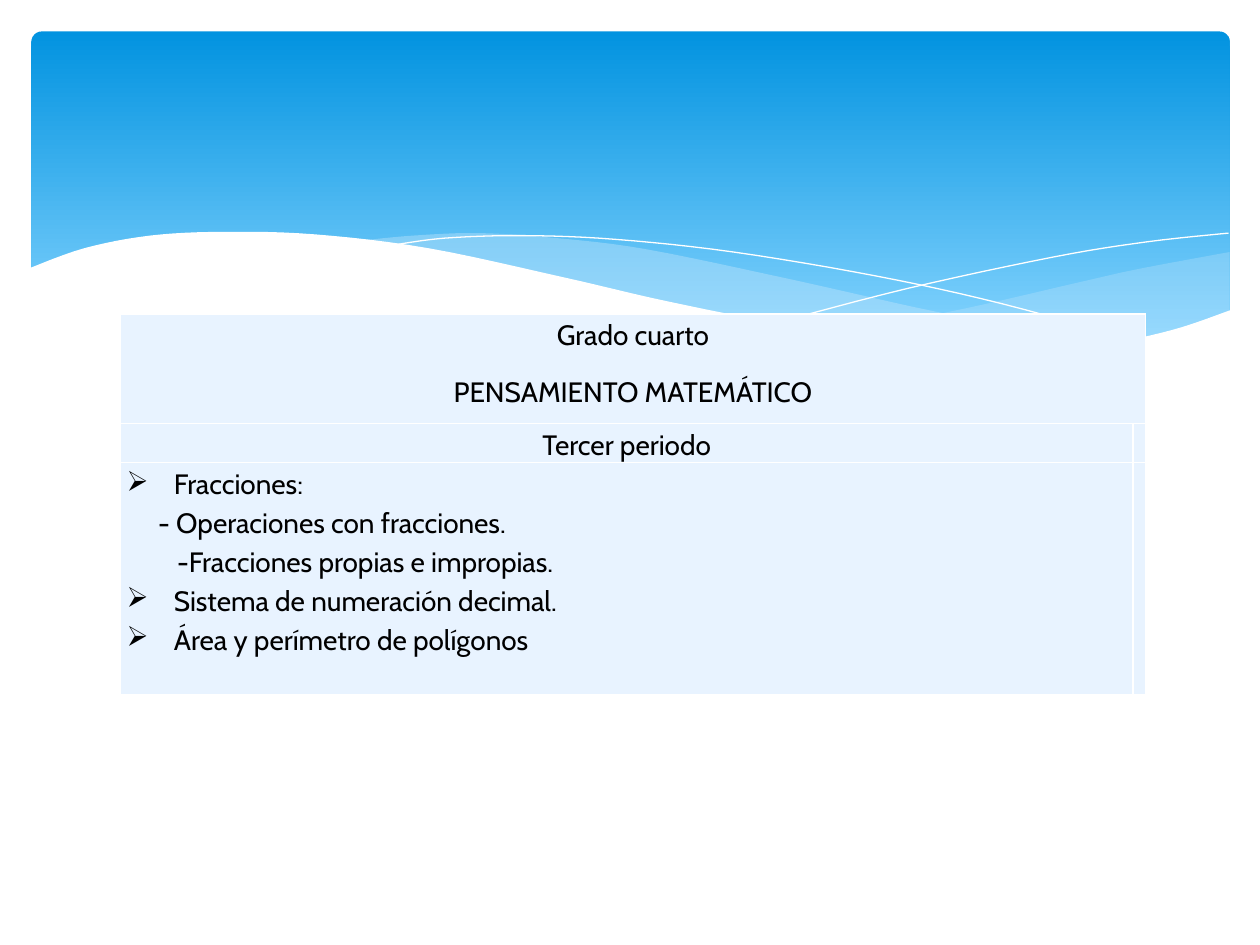
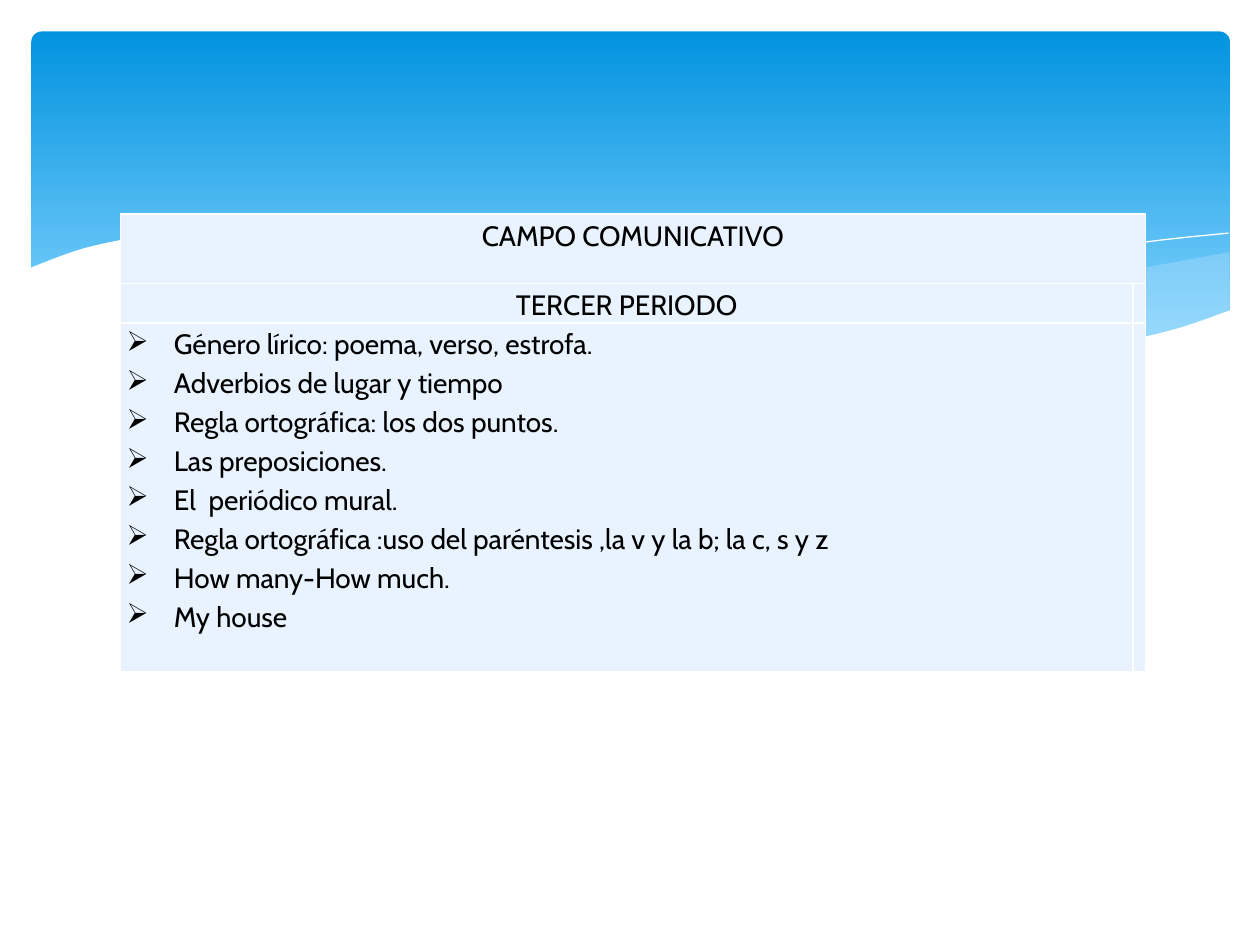
from dataclasses import dataclass
from lxml.etree import SubElement
from pptx import Presentation
from pptx.dml.color import RGBColor as Rgb
from pptx.enum.shapes import MSO_SHAPE as Preset
from pptx.enum.text import MSO_ANCHOR as Anchor, PP_ALIGN as Align
from pptx.oxml.ns import qn
from pptx.util import Inches, Pt


@dataclass(frozen=True)
class Theme:
    sky_top: str = "0293E0"
    sky_bottom: str = "83D3FE"
    veil: str = "C6E7FC"
    white: str = "FFFFFF"
    cell: str = "E8F3FF"
    ink: str = "000000"
    font: str = "Cabin"
    size: int = 16
    leading: float = 1.15
    heading_gap: int = 10
    border: int = 1


theme = Theme()

deck = Presentation()
deck.slide_width, deck.slide_height = Inches(10), Inches(7.5)
COLUMN, ROW = deck.slide_width // 40, deck.slide_height // 30


def smooth(knots, steps=6):
    padded = [knots[0], *knots, knots[-1]]
    curve = [knots[0]]
    for a, b, c, d in zip(padded, padded[1:], padded[2:], padded[3:]):
        for step in range(1, steps + 1):
            t = step / steps
            curve.append(tuple(
                (2 * q + (r - p) * t + (2 * p - 5 * q + 4 * r - s) * t ** 2
                 + (3 * q - p - 3 * r + s) * t ** 3) / 2
                for p, q, r, s in zip(a, b, c, d)))
    return curve


def write(paragraph, text, **layout):
    run = paragraph.add_run()
    run.text = text
    run.font.color.rgb = Rgb.from_string(theme.ink)
    for name, value in {"name": theme.font, "size": Pt(theme.size)}.items():
        setattr(run.font, name, value)
    for name, value in {"line_spacing": theme.leading, **layout}.items():
        setattr(paragraph, name, value)


right_veil = smooth([
    (39.04, 8), (36.24, 8.52), (34.44, 8.92), (31.16, 9.68), (28.24, 10.28), (26.44, 10.6),
]) + smooth([
    (26.44, 10.6), (28.76, 10.84), (31.24, 11.08), (33.4, 11.08), (35.56, 10.88),
    (37.4, 10.48), (39.04, 9.88),
])
middle_veil = smooth([
    (11.44, 7.64), (13.12, 7.48), (15.2, 7.4), (17.68, 7.56), (20.56, 7.92),
    (25.16, 8.88), (29.64, 9.88), (33.48, 10.6), (35.72, 10.92),
]) + smooth([
    (35.72, 10.92), (33.92, 11.08), (31.4, 11.1), (28.36, 10.88), (24.72, 10.32),
    (21.2, 9.6), (17.96, 8.88), (15.32, 8.28), (12.92, 7.84), (11.44, 7.64),
])
falling_thread = smooth([
    (12.36, 7.8), (14.12, 7.56), (16.64, 7.48), (19.56, 7.6), (23.28, 8),
    (27.8, 8.76), (31.8, 9.64), (36.28, 10.88),
])
rising_thread = smooth([
    (24.52, 10.28), (28.8, 9.16), (33.44, 8.16), (36.4, 7.68), (39, 7.4),
])
white_wave = smooth([
    (39.08, 9.84), (37.2, 10.48), (35, 10.92), (32.36, 11.08), (29.04, 10.88),
    (25.04, 10.32), (21.16, 9.56), (17.88, 8.8), (13.6, 7.88), (10, 7.44),
    (7.08, 7.36), (4.76, 7.48), (2.68, 7.88), (0.92, 8.52),
]) + [(0.92, 13.16), (39.08, 13.16)]

waves = [
    (right_veil, theme.veil, 29),
    (middle_veil, theme.veil, 40),
    (falling_thread, None, 100),
    (rising_thread, None, 100),
    (white_wave, theme.white, 100),
]

BULLET, DASH, INNER_DASH = 1.5, 1, 1.6
programmes = [
    {
        "top": 9.96,
        "heights": (3.48, 1.25, 7.36),
        "headings": ["Grado cuarto", "PENSAMIENTO MATEMÁTICO"],
        "period": "Tercer periodo",
        "topics": [
            (BULLET, "Fracciones:"),
            (DASH, "- Operaciones con fracciones."),
            (INNER_DASH, "-Fracciones propias e impropias."),
            (BULLET, "Sistema de numeración decimal."),
            (BULLET, "Área y perímetro de polígonos"),
        ],
    },
    {
        "top": 6.8,
        "heights": (2.2, 1.25, 11.08),
        "headings": ["CAMPO COMUNICATIVO"],
        "period": "TERCER PERIODO",
        "topics": [(BULLET, topic) for topic in (
            "Género lírico: poema, verso, estrofa.",
            "Adverbios de lugar y tiempo",
            "Regla ortográfica: los dos puntos.",
            "Las preposiciones.",
            "El  periódico mural.",
            "Regla ortográfica :uso del paréntesis ,la v y la b; la c, s y z",
            "How many-How much.",
            "My house",
        )],
    },
]
programme_left = 3.82
programme_columns = (32.15, 0.25)

for programme in programmes:
    slide = deck.slides.add_slide(deck.slide_layouts[6])

    sky = slide.shapes.add_shape(
        Preset.ROUNDED_RECTANGLE, COLUMN, ROW, int(38.04 * COLUMN), int(10.8 * ROW))
    sky.adjustments[0] = 0.03
    sky.shadow.inherit = False
    sky.line.fill.background()
    sky.fill.gradient()
    sky.fill.gradient_angle = 270
    shades = [(0, theme.sky_top), (0.9, theme.sky_bottom)]
    for stop, (position, shade) in zip(sky.fill.gradient_stops, shades):
        stop.position = position
        stop.color.rgb = Rgb.from_string(shade)

    for outline, colour, opacity in waves:
        points = [(round(x * COLUMN), round(y * ROW)) for x, y in outline]
        builder = slide.shapes.build_freeform(*points[0])
        builder.add_line_segments(points[1:], close=colour is not None)
        wave = builder.convert_to_shape()
        wave.shadow.inherit = False
        if colour is None:
            wave.fill.background()
            wave.line.color.rgb = Rgb.from_string(theme.white)
            wave.line.width = 0
            continue
        wave.line.fill.background()
        wave.fill.solid()
        wave.fill.fore_color.rgb = Rgb.from_string(colour)
        if opacity < 100:
            tint = wave.element.spPr.find(".//" + qn("a:srgbClr"))
            SubElement(tint, qn("a:alpha"), val=str(opacity * 1000))

    plan = slide.shapes.add_table(
        3, 2, int(programme_left * COLUMN), int(programme["top"] * ROW),
        int(sum(programme_columns) * COLUMN), int(sum(programme["heights"]) * ROW)).table
    for name, value in {"first_row": False, "horz_banding": False}.items():
        setattr(plan, name, value)
    for column, width in zip(plan.columns, programme_columns):
        column.width = int(width * COLUMN)
    for row, height in zip(plan.rows, programme["heights"]):
        row.height = int(height * ROW)

    for index, cell in enumerate(plan.iter_cells()):
        side = Inches((0.03, 0, 0.05, 0, 0.05, 0)[index])
        margins = {"margin_left": side, "margin_right": side, "margin_top": 0, "margin_bottom": 0}
        for name, value in {**margins, "vertical_anchor": Anchor.TOP}.items():
            setattr(cell, name, value)
        properties = cell._tc.get_or_add_tcPr()
        for edge in ("lnL", "lnR", "lnT", "lnB"):
            border = SubElement(properties, qn("a:" + edge), w=str(Pt(theme.border)))
            paint = SubElement(border, qn("a:solidFill"))
            SubElement(paint, qn("a:srgbClr"), val=theme.white)
        cell.fill.solid()
        cell.fill.fore_color.rgb = Rgb.from_string(theme.cell)
    plan.cell(0, 0).merge(plan.cell(0, 1))

    heading_text = plan.cell(0, 0).text_frame
    for index, heading in enumerate(programme["headings"]):
        paragraph = heading_text.add_paragraph() if index else heading_text.paragraphs[0]
        write(paragraph, heading, alignment=Align.CENTER, space_after=Pt(theme.heading_gap))

    write(plan.cell(1, 0).text_frame.paragraphs[0], programme["period"], alignment=Align.CENTER)

    topic_text = plan.cell(2, 0).text_frame
    for index, (indent, topic) in enumerate(programme["topics"]):
        paragraph = topic_text.add_paragraph() if index else topic_text.paragraphs[0]
        write(paragraph, topic)
        properties = paragraph._p.get_or_add_pPr()
        properties.set("marL", str(int(indent * COLUMN)))
        if indent == BULLET:
            properties.set("indent", str(-int(indent * COLUMN)))
            SubElement(properties, qn("a:buChar"), char="➢")

deck.save("out.pptx")
